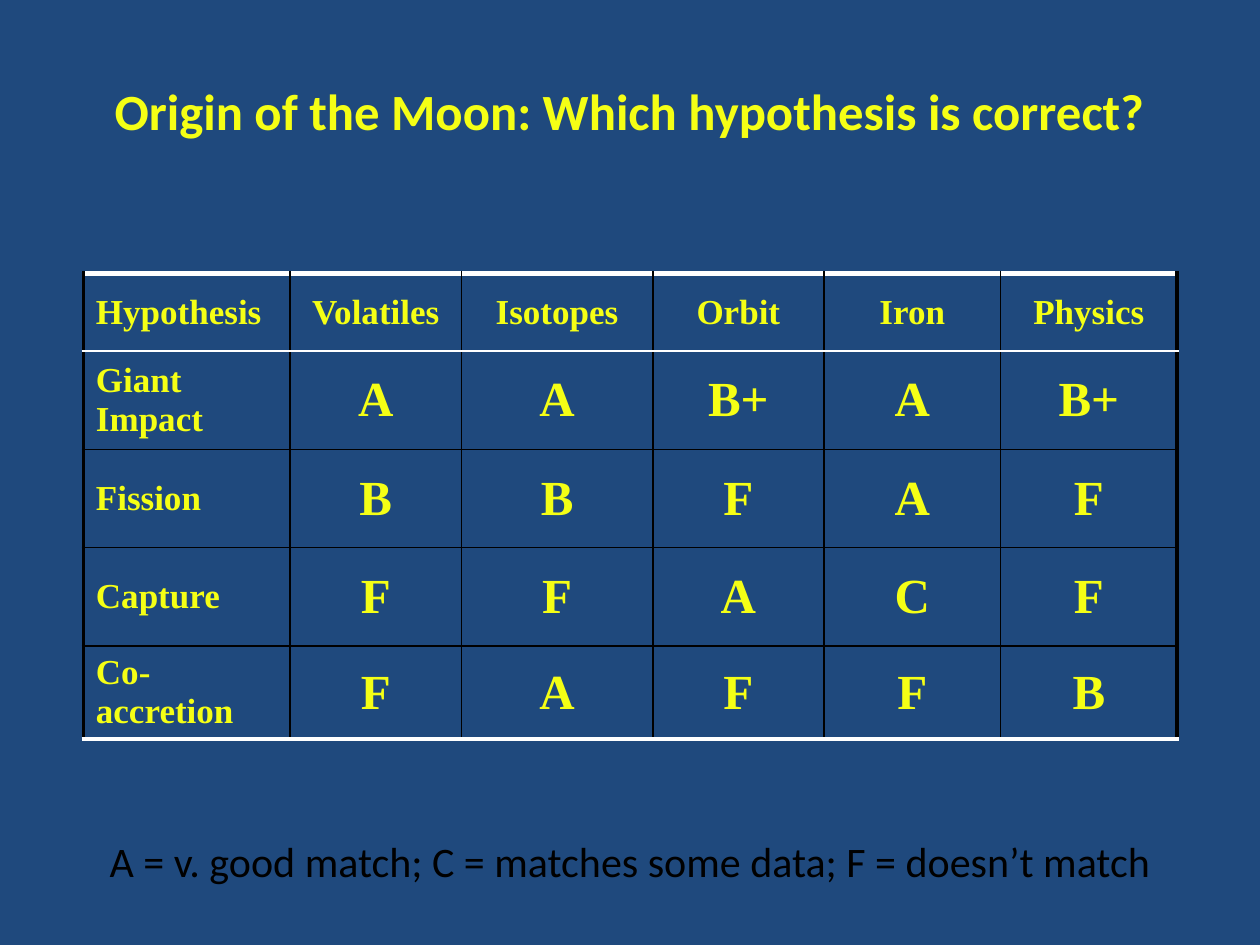
from lxml import etree
from pptx import Presentation
from pptx.dml.color import RGBColor
from pptx.enum.text import MSO_ANCHOR, MSO_AUTO_SIZE, PP_ALIGN
from pptx.oxml.ns import qn
from pptx.util import Cm, Pt

LEFT, CENTER = PP_ALIGN.LEFT, PP_ALIGN.CENTER
MIDDLE = MSO_ANCHOR.MIDDLE
GROW = MSO_AUTO_SIZE.SHAPE_TO_FIT_TEXT

BLUE, YELLOW, BLACK, WHITE = "1F497D", "F5FF15", "000000", "FFFFFF"
SANS, SERIF = "Calibri", "Times New Roman"

TITLE = "Origin of the Moon: Which hypothesis is correct?"
KEY = "A = v. good match; C = matches some data; F = doesn’t match"
GRADES = [
    ("Hypothesis", "Volatiles", "Isotopes", "Orbit", "Iron", "Physics"),
    ("Giant Impact", "A", "A", "B+", "A", "B+"),
    ("Fission", "B", "B", "F", "A", "F"),
    ("Capture", "F", "F", "A", "C", "F"),
    ("Co-accretion", "F", "A", "F", "F", "B"),
]
WIDTHS = [4.17, 3.45, 3.86, 3.45, 3.56, 3.56]
HEIGHTS = [1.57, 1.98, 1.98, 1.98, 1.88]

THIN, SIDE, EDGE = (BLACK, 1), (BLACK, 2.25), (WHITE, 3)
RULE = (WHITE, 1)


def color(code):
    return RGBColor.from_string(code)


def write(frame, text, font, size, code, bold=False, align=CENTER):
    frame.text = text
    par = frame.paragraphs[0]
    par.alignment = align
    par.space_before = Pt(0)
    par.font.name, par.font.size, par.font.bold = font, Pt(size), bold
    par.font.color.rgb = color(code)


def border(cell, side, code, width):
    props = cell._tc.get_or_add_tcPr()
    line = etree.SubElement(props, qn(f"a:ln{side}"), w=str(Pt(width)))
    fill = etree.SubElement(line, qn("a:solidFill"))
    etree.SubElement(fill, qn("a:srgbClr"), val=code)


def sides(row, col):
    """Return the line of each cell side, in the order the schema asks for."""
    last_row, last_col = len(HEIGHTS) - 1, len(WIDTHS) - 1
    return {
        "L": SIDE if col == 0 else THIN,
        "R": SIDE if col == last_col else THIN,
        "T": {0: EDGE, 1: RULE}.get(row, THIN),
        "B": {0: RULE, last_row: EDGE}.get(row, THIN),
    }


def add_grades(slide):
    frame = slide.shapes.add_table(
        len(HEIGHTS), len(WIDTHS), Cm(1.68), Cm(5.51),
        Cm(sum(WIDTHS)), Cm(sum(HEIGHTS)))
    table = frame.table
    table.first_row = table.horz_banding = False
    for col, width in zip(table.columns, WIDTHS):
        col.width = Cm(width)
    for row, height in zip(table.rows, HEIGHTS):
        row.height = Cm(height)
    for r, words in enumerate(GRADES):
        for c, word in enumerate(words):
            cell = table.cell(r, c)
            size = 28 if r and c else 20
            write(cell.text_frame, word, SERIF, size, YELLOW, True,
                  CENTER if c else LEFT)
            cell.vertical_anchor = MIDDLE
            for side, (code, width) in sides(r, c).items():
                border(cell, side, code, width)
            cell.fill.background()


def main():
    deck = Presentation()
    deck.slide_width, deck.slide_height = Cm(25.4), Cm(19.05)
    slide = deck.slides.add_slide(deck.slide_layouts[5])
    slide.background.fill.solid()
    slide.background.fill.fore_color.rgb = color(BLUE)

    title = slide.shapes.title
    title.left, title.top = Cm(1.9), Cm(0.43)
    title.width, title.height = Cm(21.6), Cm(3.6)
    write(title.text_frame, TITLE, SANS, 29, YELLOW, True)
    title.text_frame.vertical_anchor = MIDDLE

    add_grades(slide)

    key = slide.shapes.add_textbox(0, Cm(16.71), deck.slide_width, Cm(1.27))
    key.text_frame.word_wrap = True
    key.text_frame.auto_size = GROW
    write(key.text_frame, KEY, SANS, 24, BLACK)

    deck.save("out.pptx")


if __name__ == "__main__":
    main()
